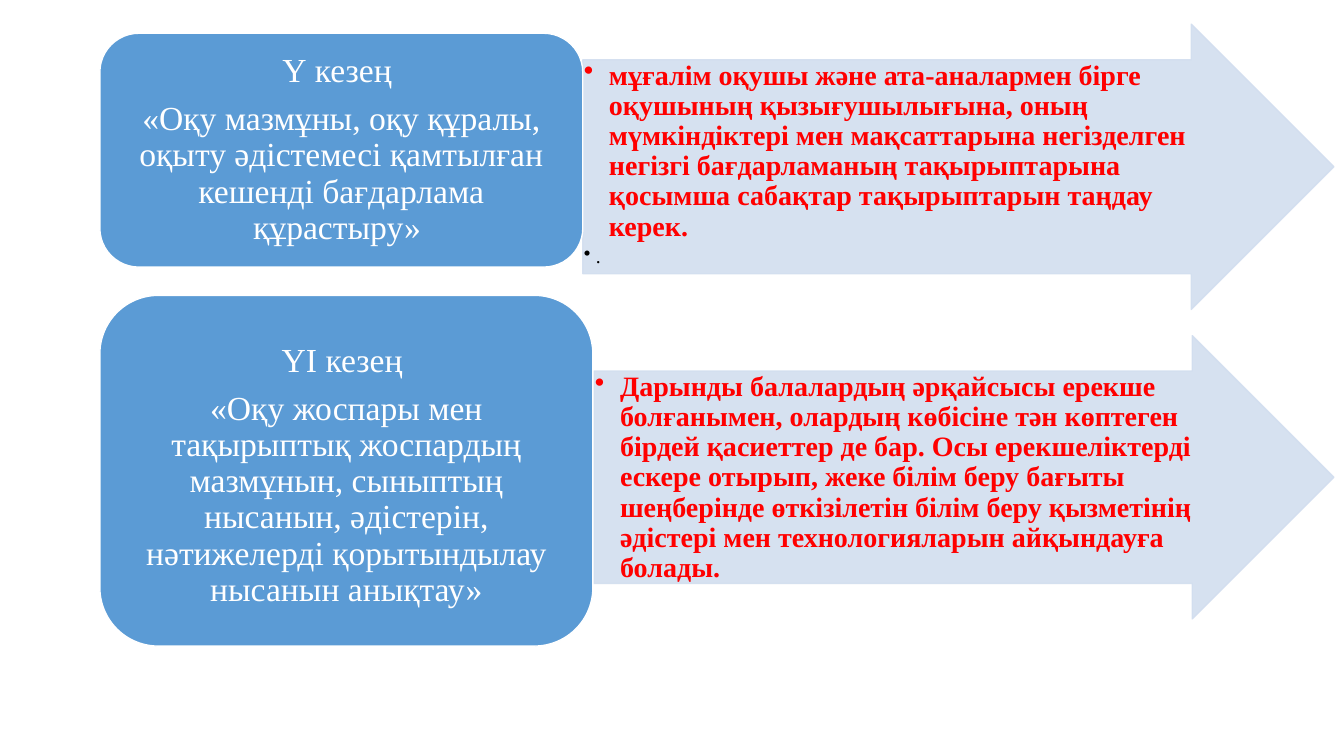
"""Build a slide of two stage cards, each with an arrow of explanations."""
from dataclasses import dataclass

import lxml.etree
import pptx
import pptx.dml.color
import pptx.enum.shapes
import pptx.enum.text
import pptx.oxml.ns
import pptx.util

EMU_PER_PX = 9144


@dataclass(frozen=True)
class Theme:
    font: str = "Times New Roman"
    card: str = "5B9BD5"
    arrow: str = "D2DEEF"
    white: str = "FFFFFF"
    red: str = "FF0000"
    black: str = "000000"
    arrow_opacity: int = 90
    line_width: int = 1
    line_spacing: float = 0.9
    card_size: int = 24
    point_size: int = 20
    small_size: int = 14


THEME = Theme()


@dataclass(frozen=True)
class Area:
    left: int
    top: int
    width: int
    height: int


@dataclass(frozen=True)
class Point:
    text: str
    size: int = THEME.point_size
    color: str = THEME.red
    bold: bool = True
    indent: int = 25


@dataclass(frozen=True)
class Stage:
    card: Area
    card_top_inset: int
    card_lines: tuple[str, ...]
    arrow: Area
    points: tuple[Point, ...]


STAGES = (
    Stage(
        Area(99, 33, 479, 232), 5,
        ("Ү кезең ",
         "«Оқу мазмұны, оқу құралы, оқыту әдістемесі қамтылған кешенді "
         "бағдарлама құрастыру» "),
        Area(578, 24, 745, 283),
        (Point("мұғалім оқушы және ата-аналармен бірге оқушының "
               "қызығушылығына, оның мүмкіндіктері мен мақсаттарына "
               "негізделген негізгі бағдарламаның тақырыптарына қосымша "
               "сабақтар тақырыптарын таңдау керек."),
         Point(".", THEME.small_size, THEME.black, False, 12)),
    ),
    Stage(
        Area(99, 293, 489, 348), 15,
        ("ҮІ кезең ",
         "«Оқу жоспары мен тақырыптық жоспардың мазмұнын, сыныптың "
         "нысанын, әдістерін, нәтижелерді қорытындылау нысанын анықтау»"),
        Area(589, 333, 734, 281),
        (Point("Дарынды балалардың әрқайсысы ерекше болғанымен, олардың "
               "көбісіне тән көптеген бірдей қасиеттер де бар. Осы "
               "ерекшеліктерді ескере отырып, жеке білім беру бағыты "
               "шеңберінде өткізілетін білім беру қызметінің әдістері мен "
               "технологияларын айқындауға болады."),),
    ),
)


def px(length: int) -> pptx.util.Emu:
    """Turn px into EMU."""
    return pptx.util.Emu(length * EMU_PER_PX)


def rgb(color: str) -> pptx.dml.color.RGBColor:
    """Read a hexadecimal colour."""
    return pptx.dml.color.RGBColor.from_string(color)


def add_block(page, kind, area: Area, fill: str, line: str):
    """Add a filled and outlined preset shape."""
    shape = page.shapes.add_shape(
        kind, px(area.left), px(area.top), px(area.width), px(area.height))
    shape.shadow.inherit = False
    shape.fill.solid()
    shape.fill.fore_color.rgb = rgb(fill)
    shape.line.color.rgb = rgb(line)
    shape.line.width = pptx.util.Pt(THEME.line_width)
    shape.text_frame.word_wrap = True
    return shape


def set_opacity(shape, percent: int) -> None:
    """Make the fill and outline of a shape partly transparent."""
    properties = shape.fill._xPr
    for color in properties.iter(pptx.oxml.ns.qn("a:srgbClr")):
        alpha = lxml.etree.SubElement(color, pptx.oxml.ns.qn("a:alpha"))
        alpha.set("val", str(percent * 1000))


def add_bullet(para, indent: int) -> None:
    """Give a paragraph a hanging bullet."""
    properties = para._p.get_or_add_pPr()
    properties.set("marL", str(px(indent)))
    properties.set("indent", str(px(-indent)))
    bullet = lxml.etree.SubElement(properties, pptx.oxml.ns.qn("a:buChar"))
    bullet.set("char", "•")


def style_paragraph(para, size: int, color: str, bold: bool,
                    space_share: float, alignment) -> None:
    """Set the font, spacing and alignment of a paragraph."""
    para.alignment = alignment
    para.line_spacing = THEME.line_spacing
    para.space_after = pptx.util.Pt(round(size * space_share, 1))
    para.font.name = THEME.font
    para.font.size = pptx.util.Pt(size)
    para.font.bold = bold
    para.font.color.rgb = rgb(color)


def paragraph_at(frame, index: int):
    """Return the first paragraph, or add a further one."""
    return frame.add_paragraph() if index else frame.paragraphs[0]


def add_arrow(page, stage: Stage) -> None:
    """Draw the arrow of a stage with its bulleted points."""
    arrow = add_block(page, pptx.enum.shapes.MSO_SHAPE.RIGHT_ARROW,
                      stage.arrow, THEME.arrow, THEME.arrow)
    arrow.adjustments[0] = 0.75
    arrow.adjustments[1] = 0.5
    set_opacity(arrow, THEME.arrow_opacity)
    frame = arrow.text_frame
    frame.vertical_anchor = pptx.enum.text.MSO_ANCHOR.TOP
    frame.margin_left = frame.margin_right = px(1)
    frame.margin_top = frame.margin_bottom = px(1)
    for index, point in enumerate(stage.points):
        para = paragraph_at(frame, index)
        para.text = point.text
        add_bullet(para, point.indent)
        style_paragraph(para, point.size, point.color, point.bold, 0.15,
                        pptx.enum.text.PP_ALIGN.LEFT)


def add_card(page, stage: Stage) -> None:
    """Draw the rounded card of a stage with its title."""
    card = add_block(page, pptx.enum.shapes.MSO_SHAPE.ROUNDED_RECTANGLE,
                     stage.card, THEME.card, THEME.white)
    frame = card.text_frame
    frame.vertical_anchor = pptx.enum.text.MSO_ANCHOR.MIDDLE
    frame.margin_top = px(stage.card_top_inset)
    for index, line in enumerate(stage.card_lines):
        para = paragraph_at(frame, index)
        para.text = line
        style_paragraph(para, THEME.card_size, THEME.white, False, 0.35,
                        pptx.enum.text.PP_ALIGN.CENTER)


def main() -> None:
    """Build and save the deck."""
    deck = pptx.Presentation()
    deck.slide_width = px(1333)
    deck.slide_height = px(750)
    page = deck.slides.add_slide(deck.slide_layouts[6])
    for stage in STAGES:
        add_arrow(page, stage)
        add_card(page, stage)
    deck.save("out.pptx")


if __name__ == "__main__":
    main()
